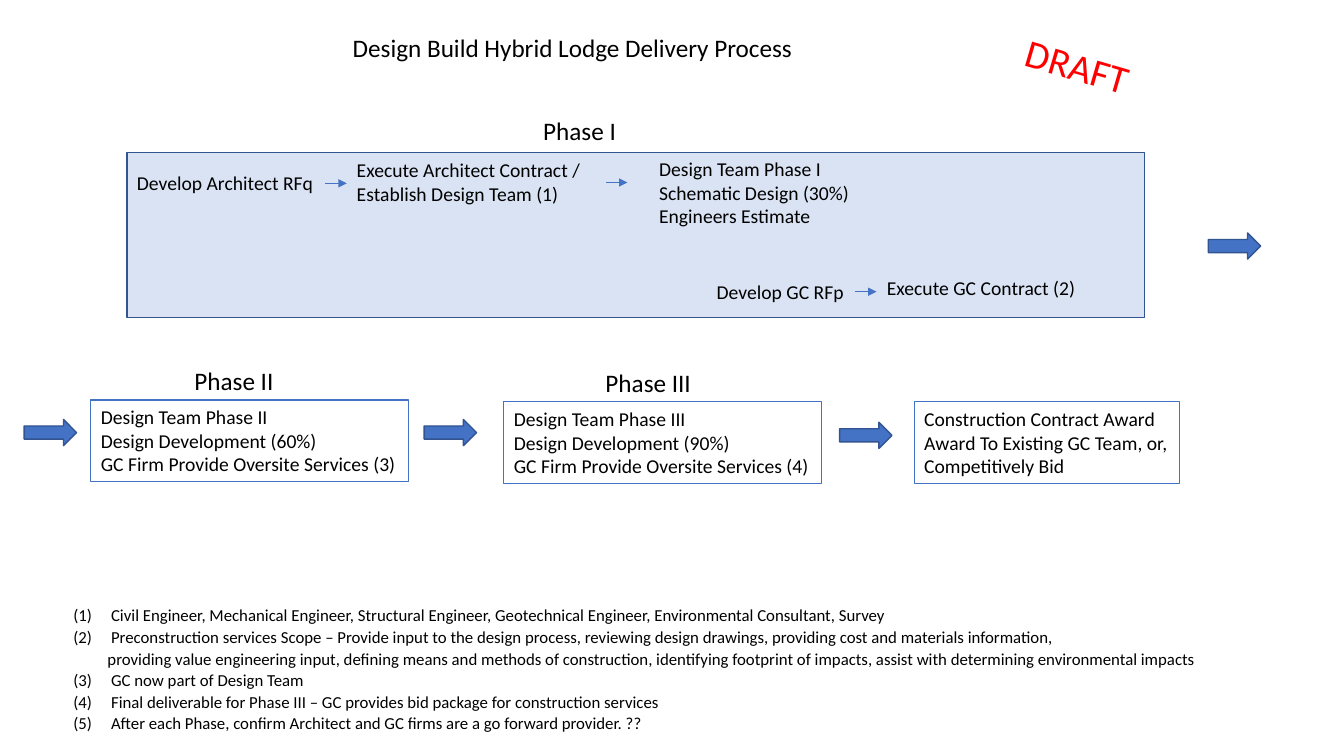
from lxml.etree import SubElement
from pptx import Presentation
from pptx.dml.color import RGBColor
from pptx.enum.shapes import MSO_CONNECTOR, MSO_SHAPE
from pptx.enum.text import MSO_AUTO_SIZE, PP_ALIGN
from pptx.oxml.ns import qn
from pptx.util import Cm, Pt

COLOURS = {"text": "000000", "draft": "FF0000", "panel": "DAE3F3",
           "accent": "4472C4", "outline": "325491"}


class ProcessPage:
    """Draws the parts of a delivery process on one slide in one style."""

    def __init__(self, page, font="Calibri"):
        self.page = page
        self.font = font

    def colour(self, name):
        return RGBColor.from_string(COLOURS[name])

    def style(self, paragraph, size, colour="text"):
        paragraph.font.name = self.font
        paragraph.font.size = Pt(size)
        paragraph.font.color.rgb = self.colour(colour)

    def text(self, left, top, width, height, lines, size=14, colour="text",
             rotation=0, border=False):
        box = self.page.shapes.add_textbox(Cm(left), Cm(top), Cm(width), Cm(height))
        box.rotation = rotation
        if border:
            box.line.color.rgb = self.colour("accent")
            box.line.width = Pt(0.75)
        frame = box.text_frame
        frame.word_wrap = False
        frame.auto_size = MSO_AUTO_SIZE.SHAPE_TO_FIT_TEXT
        frame.text = "\n".join(lines)
        for paragraph in frame.paragraphs:
            paragraph.alignment = PP_ALIGN.LEFT
            self.style(paragraph, size, colour)
        return box

    def shape(self, kind, left, top, width, height, fill):
        shape = self.page.shapes.add_shape(kind, Cm(left), Cm(top), Cm(width), Cm(height))
        shape.shadow.inherit = False
        shape.fill.solid()
        shape.fill.fore_color.rgb = self.colour(fill)
        shape.line.color.rgb = self.colour("outline")
        shape.line.width = Pt(1)

    def block_arrow(self, left, top):
        self.shape(MSO_SHAPE.RIGHT_ARROW, left, top, 1.32, 0.66, "accent")

    def step_arrow(self, left, top, length=0.54):
        arrow = self.page.shapes.add_connector(
            MSO_CONNECTOR.STRAIGHT, Cm(left), Cm(top), Cm(left + length), Cm(top))
        arrow.line.color.rgb = self.colour("accent")
        arrow.line.width = Pt(0.5)
        SubElement(arrow.line._get_or_add_ln(), qn("a:tailEnd"), type="triangle")
        SubElement(arrow._element.spPr, qn("a:effectLst"))

    def notes(self, left, top, width, height, notes):
        box = self.text(left, top, width, height, [line for _, line in notes], 12)
        box.text_frame.word_wrap = True
        for paragraph, (start, _) in zip(box.text_frame.paragraphs, notes):
            paragraph.line_spacing = 1.07
            properties = paragraph._p.get_or_add_pPr()
            if start:
                properties.set("marL", str(Cm(0.95)))
                properties.set("indent", str(Cm(-0.95)))
                number = properties.makeelement(
                    qn("a:buAutoNum"), {"type": "arabicParenBoth", "startAt": str(start)})
                properties.insert_element_before(number, "a:tabLst", "a:defRPr", "a:extLst")
            else:
                properties.set("marL", str(Cm(0.86)))
                properties.set("indent", "0")


def main():
    deck = Presentation()
    deck.slide_width, deck.slide_height = Cm(33.87), Cm(19.05)
    process = ProcessPage(deck.slides.add_slide(deck.slide_layouts[6]))

    process.shape(MSO_SHAPE.RECTANGLE, 3.2, 3.84, 25.65, 4.17, "panel")

    headings = [
        (8.64, 0.69, 11.73, "Design Build Hybrid Lodge Delivery Process"),
        (13.44, 2.79, 2.36, "Phase I"),
        (4.65, 9.09, 2.51, "Phase II"),
        (15.01, 9.14, 2.69, "Phase III"),
    ]
    for left, top, width, heading in headings:
        process.text(left, top, width, 1.02, [heading], 18)
    process.text(25.58, 0.94, 3.2, 1.45, ["DRAFT"], 28, "draft", 16.3)

    steps = [
        (3.2, 4.19, 5, 0.86, ["Develop Architect RFq"]),
        (8.74, 3.86, 6.3, 1.45,
         ["Execute Architect Contract /", "Establish Design Team (1)"]),
        (16.36, 3.84, 5.33, 2.06,
         ["Design Team Phase I", "Schematic Design (30%)", "Engineers Estimate"]),
        (17.81, 6.93, 3.76, 0.86, ["Develop GC RFp"]),
        (22.1, 6.83, 5.31, 0.86, ["Execute GC Contract (2)"]),
    ]
    for step in steps:
        process.text(*step)
    for left, top in [(8.2, 4.62), (15.27, 4.6), (21.55, 7.35)]:
        process.step_arrow(left, top)

    stages = [
        (2.29, 10.08, 8, ["Design Team Phase II", "Design Development (60%)",
                          "GC Firm Provide Oversite Services (3)"]),
        (12.7, 10.13, 8, ["Design Team Phase III", "Design Development (90%)",
                          "GC Firm Provide Oversite Services (4)"]),
        (23.04, 10.13, 6.68, ["Construction Contract Award",
                              "Award To Existing GC Team, or,", "Competitively Bid"]),
    ]
    for left, top, width, lines in stages:
        process.text(left, top, width, 2.06, lines, border=True)
    for left, top in [(30.45, 5.87), (0.61, 10.57), (10.69, 10.57), (21.16, 10.64)]:
        process.block_arrow(left, top)

    process.notes(1.6, 15.09, 29.2, 3.53, [
        (1, "Civil Engineer, Mechanical Engineer, Structural Engineer, "
            "Geotechnical Engineer, Environmental Consultant, Survey"),
        (1, "Preconstruction services Scope – Provide input to the design process, "
            "reviewing design drawings, providing cost and materials information,"),
        (None, "providing value engineering input, defining means and methods of "
               "construction, identifying footprint of impacts, assist with "
               "determining environmental impacts"),
        (3, "GC now part of Design Team"),
        (3, "Final deliverable for Phase III – GC provides bid package for "
            "construction services"),
        (3, "After each Phase, confirm Architect and GC firms are a go forward "
            "provider. ??"),
    ])
    deck.save("out.pptx")


if __name__ == "__main__":
    main()
